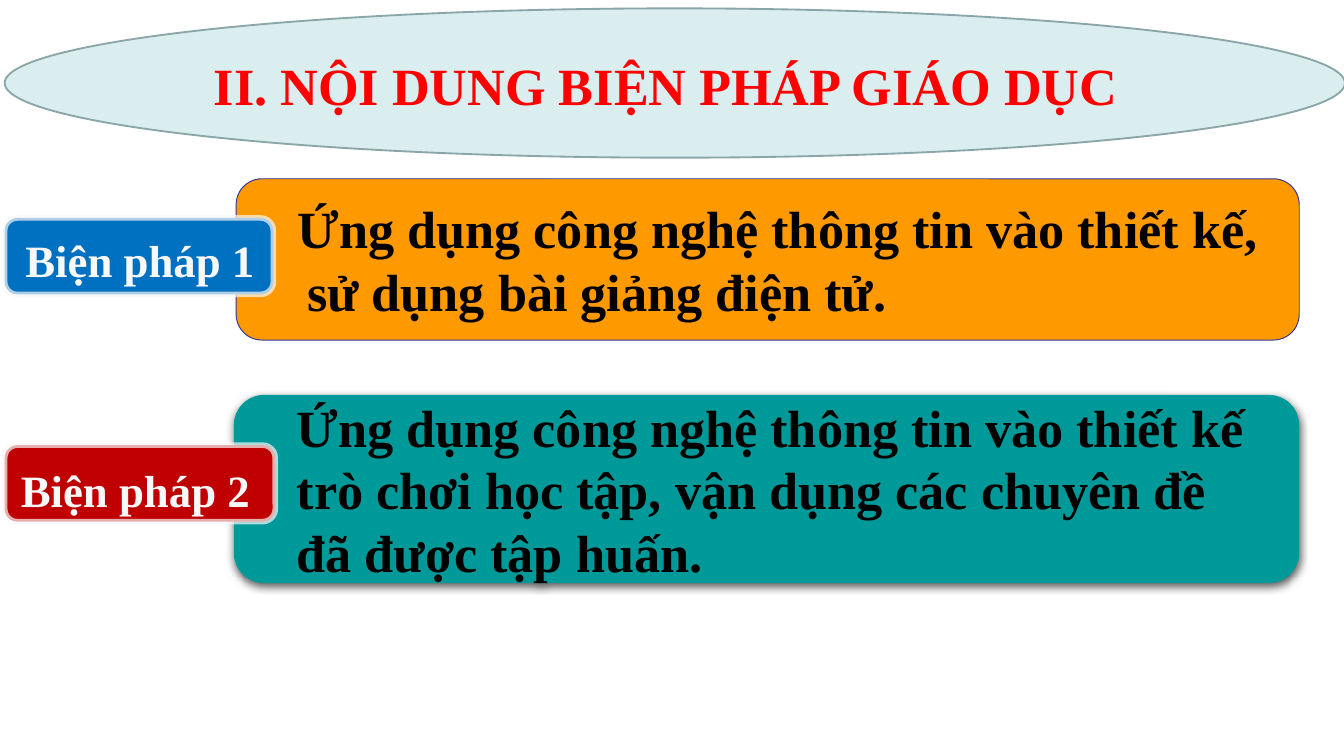
from lxml import etree
from pptx import Presentation
from pptx.dml.color import RGBColor
from pptx.enum.shapes import MSO_SHAPE
from pptx.enum.text import MSO_ANCHOR, MSO_AUTO_SIZE, PP_ALIGN
from pptx.oxml import parse_xml
from pptx.oxml.ns import nsdecls, qn
from pptx.util import Pt

OVAL, ROUNDED = MSO_SHAPE.OVAL, MSO_SHAPE.ROUNDED_RECTANGLE
MIDDLE, NO_FIT = MSO_ANCHOR.MIDDLE, MSO_AUTO_SIZE.NONE
LEFT, CENTER = PP_ALIGN.LEFT, PP_ALIGN.CENTER

FONT = "Times New Roman"
BLACK = RGBColor(0x00, 0x00, 0x00)
RED = RGBColor(0xFF, 0x00, 0x00)
OFF_WHITE = RGBColor(0xF8, 0xF8, 0xF8)
PALE_TEAL = RGBColor(0xDA, 0xED, 0xEF)
GREY_TEAL = RGBColor(0x8A, 0xA6, 0xA8)
ORANGE = RGBColor(0xFF, 0x99, 0x00)
INDIGO = RGBColor(0x33, 0x33, 0x99)
TEAL = RGBColor(0x00, 0x99, 0x99)
BLUE = RGBColor(0x00, 0x70, 0xC0)
DARK_RED = RGBColor(0xC0, 0x00, 0x00)


def add_panel(slide, preset, box, fill, line=None, line_width=1):
    panel = slide.shapes.add_shape(preset, *map(Pt, box))
    panel.shadow.inherit = False
    panel.fill.solid()
    panel.fill.fore_color.rgb = fill
    if line is None:
        panel.line.fill.background()
    else:
        panel.line.color.rgb = line
        panel.line.width = Pt(line_width)
    return panel


def write(shape, lines, size, color, align, margins):
    """Fill a shape with bold lines; margins are left, top, right, bottom."""
    frame = shape.text_frame
    frame.text = "\n".join(lines)
    frame.word_wrap = True
    frame.auto_size = NO_FIT
    frame.vertical_anchor = MIDDLE
    (frame.margin_left, frame.margin_top,
     frame.margin_right, frame.margin_bottom) = map(Pt, margins)
    for paragraph in frame.paragraphs:
        paragraph.alignment = align
        font = paragraph.runs[0].font
        font.name, font.size, font.bold = FONT, Pt(size), True
        font.color.rgb = color


def add_soft_shadow(shape):
    effects = shape._element.spPr.find(qn("a:effectLst"))
    effects.append(parse_xml(
        f'<a:outerShdw {nsdecls("a")} blurRad="{Pt(4.5)}" dist="{Pt(1.5)}" '
        'dir="5400000" rotWithShape="0"><a:srgbClr val="000000">'
        '<a:alpha val="63000"/></a:srgbClr></a:outerShdw>'))


def add_heading(slide, box, text):
    add_panel(slide, OVAL, box, PALE_TEAL, GREY_TEAL)
    left, top, width, height = box
    title = slide.shapes.title
    title.left, title.top = Pt(left + 112), Pt(top)
    title.width, title.height = Pt(width - 218), Pt(height)
    write(title, [text], 28, RED, LEFT, (0, 2, 0, 0))
    slide.shapes._spTree.append(title._element)  # bring in front of the oval


def add_measure_card(slide, box, lines, fill, line=None, last_indent=0):
    card = add_panel(slide, ROUNDED, box, fill, line, 0.5)
    card.adjustments[0] = 0.16
    write(card, lines, 28, BLACK, LEFT, (29, 0, 0, 0))
    last_paragraph = card.text_frame.paragraphs[-1]._p.get_or_add_pPr()
    last_paragraph.set("marL", str(Pt(last_indent)))
    return card


def add_measure_label(slide, box, text, fill, margins):
    label = add_panel(slide, ROUNDED, box, fill, OFF_WHITE, 3)
    line_color = label.line._ln.find(".//" + qn("a:srgbClr"))
    etree.SubElement(line_color, qn("a:alpha")).set("val", "70000")
    write(label, [text], 24, OFF_WHITE, CENTER, margins)


def main():
    deck = Presentation()
    deck.slide_width, deck.slide_height = Pt(720), Pt(405)
    slide = deck.slides.add_slide(deck.slide_layouts[5])

    add_measure_card(
        slide, (126.5, 95.8, 569.5, 86.4),
        ["Ứng dụng công nghệ thông tin vào thiết kế,",
         "sử dụng bài giảng điện tử."],
        ORANGE, INDIGO, last_indent=5)
    game_card = add_measure_card(
        slide, (125.3, 211.6, 570.7, 100.8),
        ["Ứng dụng công nghệ thông tin vào thiết kế",
         "trò chơi học tập, vận dụng các chuyên đề",
         "đã được tập huấn."],
        TEAL)
    add_soft_shadow(game_card)

    add_measure_label(slide, (2.5, 116.8, 144, 41), "Biện pháp 1", BLUE,
                      (1, 4, 0, 0))
    add_measure_label(slide, (2.5, 238.5, 145, 41), "Biện pháp 2", DARK_RED,
                      (0, 7, 5, 0))
    add_heading(slide, (2.5, 4.5, 718, 80),
                "II. NỘI DUNG BIỆN PHÁP GIÁO DỤC")
    deck.save("out.pptx")


if __name__ == "__main__":
    main()
